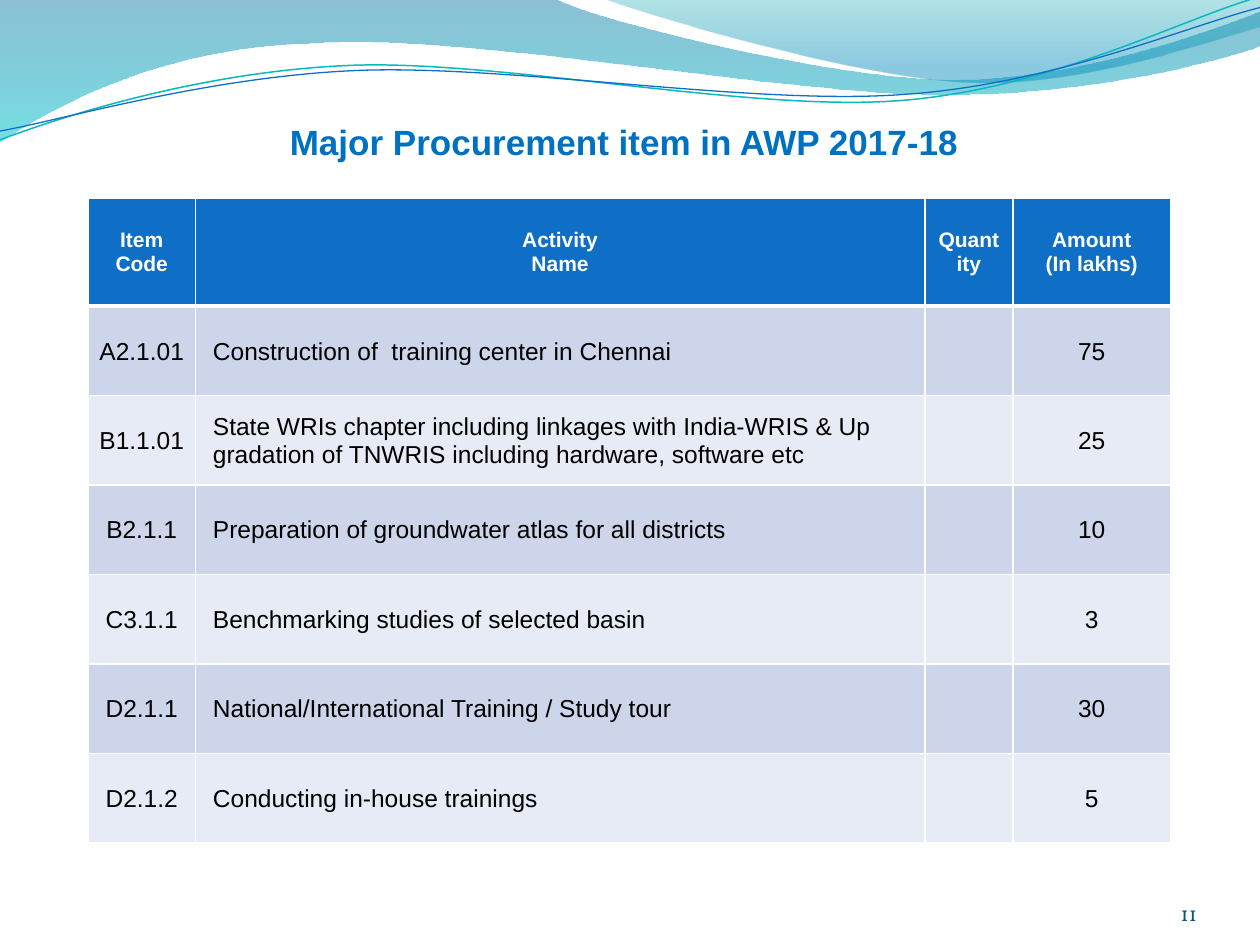
from lxml import etree
from pptx import Presentation
from pptx.dml.color import RGBColor
from pptx.enum.text import MSO_ANCHOR, PP_ALIGN
from pptx.oxml.ns import qn
from pptx.util import Inches, Pt

WHITE = RGBColor(0xFF, 0xFF, 0xFF)
BLACK = RGBColor(0x00, 0x00, 0x00)
TITLE_BLUE = RGBColor(0x00, 0x70, 0xC0)
HEADER_BLUE = RGBColor(0x0F, 0x6F, 0xC6)
PAGE_TEAL = RGBColor(0x04, 0x5D, 0x75)
LINE_TEAL = RGBColor(0x0A, 0xB8, 0xBF)
BANDS = [RGBColor(0xCC, 0xD5, 0xEA), RGBColor(0xE7, 0xEB, 0xF5)]

# Each wave is a start point followed by line (2 numbers) or cubic (6 numbers) steps.
# Gradient stops are (position, colour, opacity in percent).
FILLED_WAVES = [
    ([(0, 0), (4.4, -0.01), (4.76, 0.17, 6.64, 0.63, 7.58, 0.63),
      (8.53, 0.63, 9.58, 0.26, 10, 0.09), (10.01, 0.36),
      (9.83, 0.44, 8.7, 0.76, 7.46, 0.75), (6.22, 0.75, 3.82, 0.28, 2.57, 0.34),
      (1.29, 0.36, 0.46, 0.83, -0.01, 1.13)],
     [(0, RGBColor(0x00, 0x74, 0xA1), 45), (1, RGBColor(0x00, 0xC6, 0xCF), 55)]),
    ([(4.79, -0.01), (5.09, 0.11, 6.82, 0.62, 7.69, 0.65),
      (8.56, 0.69, 9.61, 0.32, 10, 0.21), (10, 0)],
     [(0, RGBColor(0x00, 0xA1, 0xA9), 30), (0.8, RGBColor(0x00, 0x8B, 0xBF), 45)]),
]
LINE_WAVES = [
    ([(0, 1.11), (0.48, 0.93, 1.58, 0.57, 2.77, 0.52),
      (3.95, 0.47, 5.93, 0.89, 7.13, 0.8), (8.33, 0.71, 9.38, 0.15, 9.98, -0.02)],
     LINE_TEAL, 0.85),
    ([(0, 1.04), (0.47, 0.96, 1.64, 0.61, 2.83, 0.56),
      (4.03, 0.51, 5.97, 0.84, 7.17, 0.75), (8.36, 0.67, 9.41, 0.21, 10, 0.06)],
     HEADER_BLUE, 0.75),
]

HEADERS = ["Item Code", "Activity\nName", "Quantity", "Amount\n(In lakhs)"]
ITEMS = [
    ("A2.1.01", "Construction of  training center in Chennai", "", "75"),
    ("B1.1.01", "State WRIs chapter including linkages with India-WRIS & Up "
                "gradation of TNWRIS including hardware, software etc", "", "25"),
    ("B2.1.1", "Preparation of groundwater atlas for all districts", "", "10"),
    ("C3.1.1", "Benchmarking studies of selected basin", "", "3"),
    ("D2.1.1", "National/International Training / Study tour", "", "30"),
    ("D2.1.2", "Conducting in-house trainings", "", "5"),
]
COL_WIDTHS = [0.85, 5.79, 0.7, 1.25]
HEADER_HEIGHT, ROW_HEIGHT = 0.86, 0.71
ACTIVITY_COL = 1


class SlideBuilder:
    def __init__(self, slide, font="Arial"):
        self.slide = slide
        self.font = font

    def style(self, tf, size, color, bold=False, align=PP_ALIGN.LEFT, font=None):
        for p in tf.paragraphs:
            p.alignment = align
            for r in p.runs:
                r.font.name = font or self.font
                r.font.size = Pt(size)
                r.font.bold = bold
                r.font.color.rgb = color

    def wave(self, steps, closed):
        """Build an outline through the step ends, then bend its cubic steps."""
        steps = [[Inches(v) for v in step] for step in steps]
        fb = self.slide.shapes.build_freeform(*steps[0])
        fb.add_line_segments([step[-2:] for step in steps[1:]], close=closed)
        sp = fb.convert_to_shape()
        sp.shadow.inherit = False
        segments = list(sp._element.spPr.iter(qn("a:lnTo")))
        for segment, step in zip(segments, steps[1:]):
            if len(step) == 6:
                curve = etree.Element(qn("a:cubicBezTo"))
                for x, y in zip(step[::2], step[1::2]):
                    etree.SubElement(curve, qn("a:pt"), x=str(x - sp.left), y=str(y - sp.top))
                segment.getparent().replace(segment, curve)
        return sp

    def filled_wave(self, steps, stops):
        sp = self.wave(steps, True)
        sp.line.fill.background()
        sp.fill.gradient()
        sp.fill.gradient_angle = 270
        for stop, (position, color, _) in zip(sp.fill.gradient_stops, stops):
            stop.position = position
            stop.color.rgb = color
        for clr, (_, _, opacity) in zip(sp._element.spPr.iter(qn("a:srgbClr")), stops):
            etree.SubElement(clr, qn("a:alpha"), val=str(opacity * 1000))

    def line_wave(self, steps, color, width):
        sp = self.wave(steps, False)
        sp.fill.background()
        sp.line.color.rgb = color
        sp.line.width = Pt(width)

    def text(self, text, left, top, width, height, top_inset=0, **style):
        sp = self.slide.shapes.add_textbox(*map(Inches, (left, top, width, height)))
        tf = sp.text_frame
        tf.word_wrap = True
        tf.vertical_anchor = MSO_ANCHOR.BOTTOM
        tf.margin_left = tf.margin_right = tf.margin_bottom = 0
        tf.margin_top = Inches(top_inset)
        tf.text = text
        self.style(tf, **style)

    def borders(self, cell, bottom=1, top=1):
        tcPr = cell._tc.get_or_add_tcPr()
        widths = {"a:lnL": 1, "a:lnR": 1, "a:lnT": top, "a:lnB": bottom}
        for i, (tag, width) in enumerate(widths.items()):
            ln = etree.Element(qn(tag), w=str(Pt(width)))
            fill = etree.SubElement(ln, qn("a:solidFill"))
            etree.SubElement(fill, qn("a:srgbClr"), val=str(WHITE))
            tcPr.insert(i, ln)

    def header_cell(self, cell, text):
        cell.text = text
        cell.fill.solid()
        cell.fill.fore_color.rgb = HEADER_BLUE
        cell.vertical_anchor = MSO_ANCHOR.MIDDLE
        self.style(cell.text_frame, 12, WHITE, True, PP_ALIGN.CENTER)
        self.borders(cell, bottom=3)

    def item_cell(self, cell, text, band, is_activity, top_border):
        cell.fill.solid()
        cell.fill.fore_color.rgb = band
        if text:
            cell.text = text
            cell.vertical_anchor = MSO_ANCHOR.MIDDLE
            cell.margin_left = cell.margin_right = cell.margin_top = Inches(0.01)
            cell.margin_bottom = 0
            align = PP_ALIGN.LEFT if is_activity else PP_ALIGN.CENTER
            self.style(cell.text_frame, 14, BLACK, False, align)
            if is_activity:
                pPr = cell.text_frame.paragraphs[0]._p.get_or_add_pPr()
                pPr.set("marL", str(Inches(0.13)))
                pPr.set("indent", "0")
        self.borders(cell, top=top_border)

    def table(self, left, top):
        height = HEADER_HEIGHT + ROW_HEIGHT * len(ITEMS)
        frame = self.slide.shapes.add_table(
            len(ITEMS) + 1, len(HEADERS), Inches(left), Inches(top),
            Inches(sum(COL_WIDTHS)), Inches(height))
        table = frame.table
        for column, width in zip(table.columns, COL_WIDTHS):
            column.width = Inches(width)
        for i, row in enumerate(table.rows):
            row.height = Inches(ROW_HEIGHT if i else HEADER_HEIGHT)
        for c, text in enumerate(HEADERS):
            self.header_cell(table.cell(0, c), text)
        for i, item in enumerate(ITEMS):
            for c, text in enumerate(item):
                self.item_cell(table.cell(i + 1, c), text, BANDS[i % 2],
                               c == ACTIVITY_COL, 1 if i else 3)


def main():
    prs = Presentation()
    prs.slide_width, prs.slide_height = Inches(10), Inches(7.5)
    s = SlideBuilder(prs.slides.add_slide(prs.slide_layouts[6]))
    for steps, stops in FILLED_WAVES:
        s.filled_wave(steps, stops)
    for steps, color, width in LINE_WAVES:
        s.line_wave(steps, color, width)
    s.text("11", 8.67, 6.95, 0.83, 0.4, size=12, color=PAGE_TEAL,
           align=PP_ALIGN.RIGHT, font="Vollkorn")
    s.text("Major Procurement item in AWP 2017-18", 2.3, 0.94, 5.39, 0.35,
           top_inset=0.05, size=20, color=TITLE_BLUE, bold=True)
    s.table(0.7, 1.57)
    prs.save("out.pptx")


if __name__ == "__main__":
    main()
